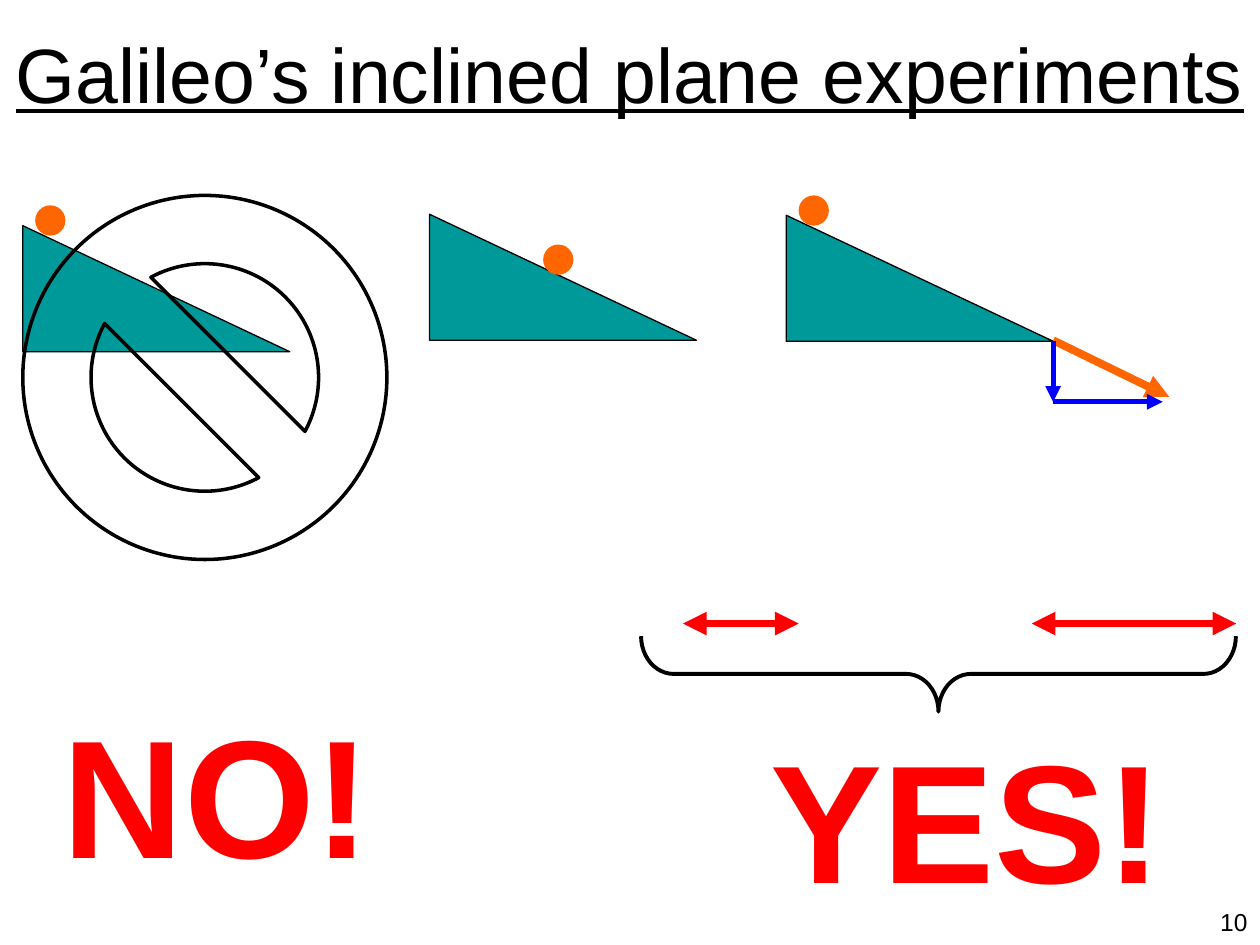
from lxml.etree import SubElement
from pptx import Presentation
from pptx.dml.color import RGBColor
from pptx.enum.shapes import MSO_CONNECTOR as CONNECTOR, MSO_SHAPE as SHAPE
from pptx.enum.text import MSO_ANCHOR as ANCHOR, MSO_AUTO_SIZE as AUTO_SIZE, PP_ALIGN as ALIGN
from pptx.oxml.ns import qn
from pptx.util import Cm, Pt

BLACK, TEAL, ORANGE, BLUE, RED = "000000", "009999", "FF6600", "0000FF", "FF0000"
RAMP_WIDTH, RAMP_HEIGHT, BALL_SIZE = 5.38, 2.54, 0.61


def color(hex_value):
    return RGBColor.from_string(hex_value)


def add_text(slide, text, left, top, width, height, size, ink=BLACK, bold=False,
             underline=False, align=ALIGN.LEFT, anchor=ANCHOR.TOP, wrap=True):
    box = slide.shapes.add_textbox(Cm(left), Cm(top), Cm(width), Cm(height))
    frame = box.text_frame
    frame.word_wrap = wrap
    frame.auto_size = AUTO_SIZE.NONE if wrap else AUTO_SIZE.SHAPE_TO_FIT_TEXT
    frame.vertical_anchor = anchor
    paragraph = frame.paragraphs[0]
    paragraph.alignment = align
    run = paragraph.add_run()
    run.text = text
    font = run.font
    font.name, font.size = "Arial", Pt(size)
    font.bold, font.underline = bold, underline
    font.color.rgb = color(ink)
    return box


def add_figure(slide, kind, left, top, width, height, fill=None, line_width=None):
    figure = slide.shapes.add_shape(kind, Cm(left), Cm(top), Cm(width), Cm(height))
    figure.shadow.inherit = False
    if fill:
        figure.fill.solid()
        figure.fill.fore_color.rgb = color(fill)
    else:
        figure.fill.background()
    if line_width:
        figure.line.color.rgb = color(BLACK)
        figure.line.width = Pt(line_width)
    else:
        figure.line.fill.background()
    return figure


def add_arrow(slide, start, end, ink, width, both_ends=False):
    x1, y1, x2, y2 = (Cm(value) for value in (*start, *end))
    arrow = slide.shapes.add_connector(CONNECTOR.STRAIGHT, x1, y1, x2, y2)
    arrow.line.color.rgb = color(ink)
    arrow.line.width = Pt(width)
    line = arrow.line._get_or_add_ln()
    for end_tag in ("a:headEnd", "a:tailEnd") if both_ends else ("a:tailEnd",):
        SubElement(line, qn(end_tag), type="triangle")
    SubElement(arrow._element.spPr, qn("a:effectLst"))


def add_ramp(slide, left, top, ball_left, ball_top):
    add_figure(slide, SHAPE.RIGHT_TRIANGLE, left, top, RAMP_WIDTH, RAMP_HEIGHT, TEAL, 0.75)
    add_figure(slide, SHAPE.OVAL, ball_left, ball_top, BALL_SIZE, BALL_SIZE, ORANGE)


def main():
    deck = Presentation()
    deck.slide_width, deck.slide_height = Cm(25.4), Cm(19.05)
    slide = deck.slides.add_slide(deck.slide_layouts[6])

    # Title, bleeding to the slide edges
    title = add_text(slide, "Galileo’s inclined plane experiments", 0, 0, 25.4, 2.92, 44,
                     underline=True, align=ALIGN.CENTER, anchor=ANCHOR.MIDDLE)
    title.text_frame.margin_left = title.text_frame.margin_right = 0

    # Three inclined planes with their balls
    for ramp in ((0.46, 4.55, 0.71, 4.14),
                 (8.66, 4.32, 10.95, 4.93),
                 (15.85, 4.34, 16.1, 3.94)):
        add_ramp(slide, *ramp)

    # Verdicts
    verdict = dict(size=96, ink=RED, bold=True, wrap=False)
    add_text(slide, "NO!", 1.02, 13.79, 6.78, 4.37, **verdict)
    add_text(slide, "YES!", 15.29, 14.3, 8.48, 4.37, **verdict)

    # Velocity and its components at the foot of the last ramp
    foot_x = 21.23
    add_arrow(slide, (foot_x, 6.86), (23.57, 8), ORANGE, 4.5)
    add_arrow(slide, (foot_x, 6.88), (foot_x, 8.1), BLUE, 3)
    add_arrow(slide, (foot_x, 8.1), (23.44, 8.1), BLUE, 3)

    # Slide number
    add_text(slide, "10", 24.13, 18.16, 1.27, 0.81, 14, align=ALIGN.RIGHT)

    # Landing distances, gathered by a brace
    brace = add_figure(slide, SHAPE.LEFT_BRACE, 18.16, 7.59, 1.52, 11.99, line_width=2.25)
    brace.rotation = 270
    brace.adjustments[0] = 0.43
    for near, far in ((13.77, 16.1), (20.8, 24.92)):
        add_arrow(slide, (near, 12.57), (far, 12.57), RED, 4.5, both_ends=True)

    # Prohibition sign over the first experiment
    add_figure(slide, SHAPE.NO_SYMBOL, 0.46, 3.94, 7.34, 7.34, line_width=2)

    deck.save("out.pptx")


if __name__ == "__main__":
    main()
